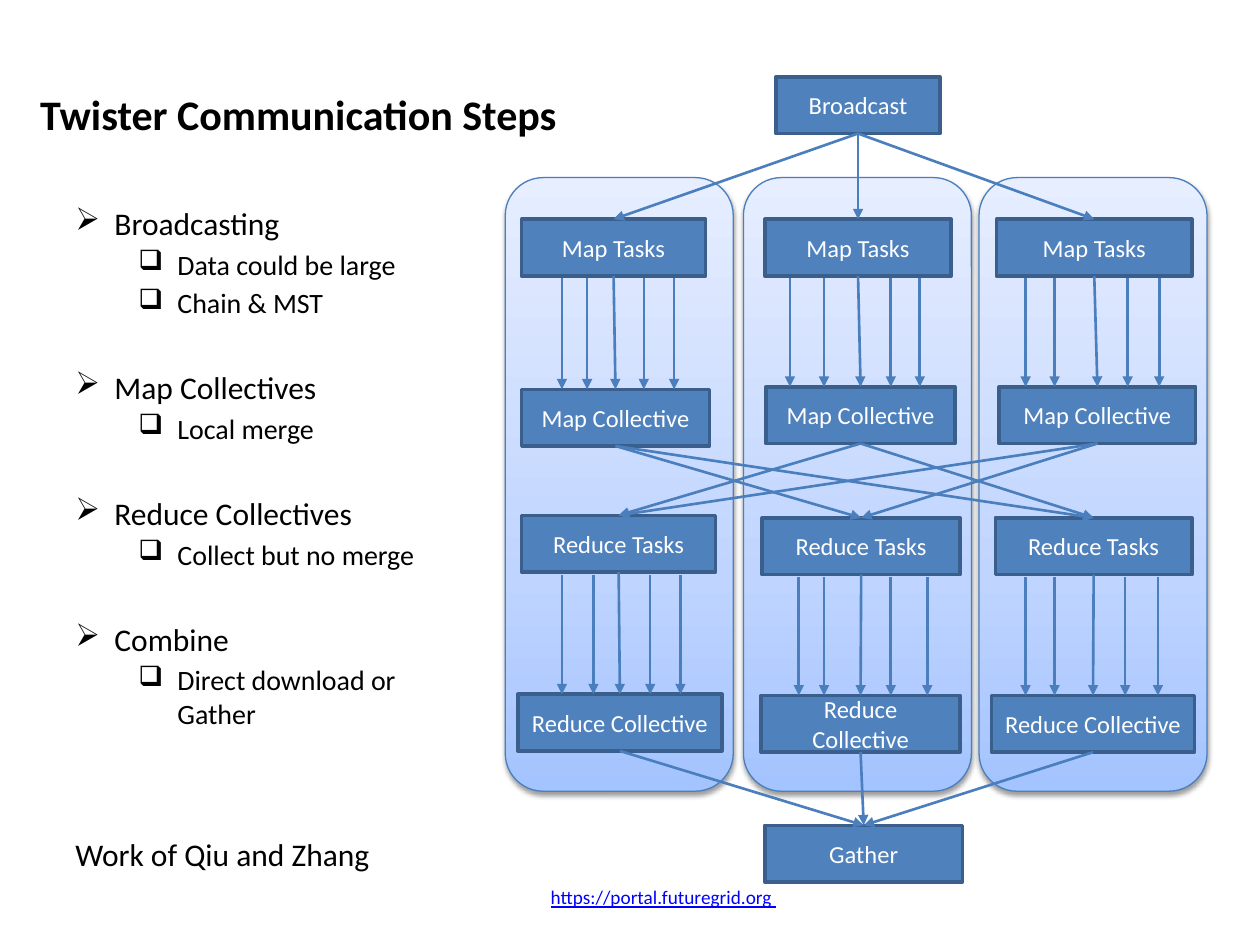
"""Build the slide of Twister communication steps."""
from dataclasses import dataclass

from lxml.etree import SubElement
from pptx import Presentation
from pptx.dml.color import RGBColor
from pptx.enum.shapes import MSO_CONNECTOR, MSO_SHAPE
from pptx.enum.text import MSO_ANCHOR, PP_ALIGN
from pptx.oxml import parse_xml
from pptx.oxml.ns import nsdecls, qn
from pptx.util import Inches, Pt


@dataclass(frozen=True)
class Theme:
    font: str = "Calibri"
    ink: str = "000000"
    white: str = "FFFFFF"
    link: str = "0000FF"
    fill: str = "4F81BD"
    edge: str = "3A5F8C"
    line: str = "4B7EBC"
    fade: tuple = ((0, "A4C4FF"), (35, "BFD4FF"), (100, "E6EEFF"))
    title: int = 24
    head: int = 18
    item: int = 16
    node: int = 14
    foot: int = 11


@dataclass(frozen=True)
class Node:
    text: str
    left: float
    top: float
    width: float
    height: float = 0.45


@dataclass(frozen=True)
class Lane:
    left: float
    nodes: tuple
    maps: tuple
    folds: tuple


@dataclass(frozen=True)
class Topic:
    head: str
    items: tuple


THEME = Theme()
LANES = (
    Lane(4.01,
         (Node("Map Tasks", 4.14, 1.74, 1.46), Node("Map Collective", 4.14, 3.09, 1.49),
          Node("Reduce Tasks", 4.14, 4.09, 1.54), Node("Reduce Collective", 4.11, 5.51, 1.62)),
         (4.46, 4.66, 5.11, 5.35), (4.46, 4.71, 5.16, 5.4)),
    Lane(5.9,
         (Node("Map Tasks", 6.07, 1.74, 1.48), Node("Map Collective", 6.08, 3.07, 1.5),
          Node("Reduce Tasks", 6.05, 4.11, 1.57), Node("Reduce Collective", 6.04, 5.52, 1.58)),
         (6.27, 6.54, 7.07, 7.3), (6.34, 6.54, 7.07, 7.36)),
    Lane(7.77,
         (Node("Map Tasks", 7.91, 1.74, 1.55), Node("Map Collective", 7.93, 3.07, 1.56),
          Node("Reduce Tasks", 7.9, 4.11, 1.56), Node("Reduce Collective", 7.87, 5.52, 1.61)),
         (8.14, 8.37, 8.95, 9.2), (8.14, 8.37, 8.93, 9.19)),
)
TOPICS = (
    Topic("Broadcasting", ("Data could be large", "Chain & MST")),
    Topic("Map Collectives", ("Local merge",)),
    Topic("Reduce Collectives", ("Collect but no merge",)),
    Topic("Combine", ("Direct download or Gather",)),
)


def write(para, text: str, *, size: int, color: str = THEME.ink, bold: bool = False,
          under: bool = False, align=PP_ALIGN.LEFT) -> None:
    para.alignment = align
    run = para.add_run()
    run.text = text
    font = run.font
    font.name, font.size, font.bold, font.underline = THEME.font, Pt(size), bold, under
    font.color.rgb = RGBColor.from_string(color)


def label(slide, box: tuple, wrap: bool = False):
    frame = slide.shapes.add_textbox(*map(Inches, box)).text_frame
    frame.word_wrap = wrap
    return frame


def bullet(para, text: str, *, mark: str, size: int, level: int, before: int) -> None:
    para.level = level
    para.space_before = Pt(before)
    props = para._p.get_or_add_pPr()
    props.set("marL", str(Inches(0.31 + 0.5 * level)))
    props.set("indent", str(-Inches(0.31)))
    SubElement(props, qn("a:buChar")).set("char", mark)
    write(para, text, size=size)


def outline(slide, topics: tuple) -> None:
    frame = label(slide, (0.5, 1.57, 3.29, 5.13), wrap=True)
    for rank, topic in enumerate(topics):
        para = frame.add_paragraph() if rank else frame.paragraphs[0]
        bullet(para, topic.head, mark="➢", size=THEME.head, level=0, before=28 if rank else 0)
        for item in topic.items:
            bullet(frame.add_paragraph(), item, mark="❑", size=THEME.item, level=1, before=3)


def panel(slide, left: float) -> None:
    shape = slide.shapes.add_shape(MSO_SHAPE.ROUNDED_RECTANGLE, Inches(left), Inches(1.41),
                                   Inches(1.81), Inches(4.87))
    shape.fill.gradient()
    stops = "".join(f'<a:gs pos="{at * 1000}"><a:srgbClr val="{color}"/></a:gs>'
                    for at, color in THEME.fade)
    props = shape.element.spPr
    props.replace(props.find(qn("a:gradFill")), parse_xml(
        f'<a:gradFill {nsdecls("a")} rotWithShape="1"><a:gsLst>{stops}</a:gsLst>'
        '<a:lin ang="16200000" scaled="0"/></a:gradFill>'))
    shape.line.color.rgb = RGBColor.from_string(THEME.line)
    shape.line.width = Pt(0.75)
    shape.shadow.inherit = False
    props.find(qn("a:effectLst")).append(parse_xml(
        f'<a:outerShdw {nsdecls("a")} blurRad="{Pt(3.1)}" dist="{Pt(1.6)}" dir="5400000" '
        'rotWithShape="0"><a:srgbClr val="000000"><a:alpha val="38000"/></a:srgbClr>'
        '</a:outerShdw>'))


def block(slide, node: Node):
    shape = slide.shapes.add_shape(MSO_SHAPE.RECTANGLE, Inches(node.left), Inches(node.top),
                                   Inches(node.width), Inches(node.height))
    shape.shadow.inherit = False
    shape.fill.solid()
    shape.fill.fore_color.rgb = RGBColor.from_string(THEME.fill)
    shape.line.color.rgb = RGBColor.from_string(THEME.edge)
    shape.line.width = Pt(2)
    frame = shape.text_frame
    frame.vertical_anchor = MSO_ANCHOR.MIDDLE
    write(frame.paragraphs[0], node.text, size=THEME.node, color=THEME.white,
          align=PP_ALIGN.CENTER)
    return shape


def arrow(slide, start: tuple, end: tuple):
    link = slide.shapes.add_connector(MSO_CONNECTOR.STRAIGHT, *start, *end)
    link.line.color.rgb = RGBColor.from_string(THEME.line)
    link.line.width = Pt(1.5)
    SubElement(link.line._get_or_add_ln(), qn("a:tailEnd")).set("type", "triangle")
    SubElement(link.element.spPr, qn("a:effectLst"))
    return link


def join(slide, upper, lower) -> None:
    link = arrow(slide, (0, 0), (0, 0))
    link.begin_connect(upper, 2)
    link.end_connect(lower, 0)


def fan(slide, upper, lower, spots: tuple) -> None:
    join(slide, upper, lower)
    start = upper.top + upper.height + Inches(0.02)
    for spot in spots:
        arrow(slide, (Inches(spot), start), (Inches(spot), lower.top))


def main() -> None:
    deck = Presentation()
    deck.slide_width, deck.slide_height = Inches(10), Inches(7.5)
    slide = deck.slides.add_slide(deck.slide_layouts[6])

    foot = label(slide, (3.44, 6.92, 3.65, 0.4), wrap=True)
    foot.vertical_anchor = MSO_ANCHOR.MIDDLE
    write(foot.paragraphs[0], "https://portal.futuregrid.org ", size=THEME.foot,
          color=THEME.link, under=True, align=PP_ALIGN.CENTER)
    outline(slide, TOPICS)

    for lane in LANES:
        panel(slide, lane.left)
    source = block(slide, Node("Broadcast", 6.16, 0.61, 1.3))
    sink = block(slide, Node("Gather", 6.07, 6.55, 1.57))
    grid = [[block(slide, node) for node in lane.nodes] for lane in LANES]

    for lane, (task, merge, fold, last) in zip(LANES, grid):
        join(slide, source, task)
        fan(slide, task, merge, lane.maps)
        fan(slide, fold, last, lane.folds)
        join(slide, last, sink)
        for other in grid:
            if other[2] is not fold:
                join(slide, merge, other[2])

    title = label(slide, (0.22, 0.65, 4.35, 0.5))
    write(title.paragraphs[0], "Twister Communication Steps", size=THEME.title, bold=True)
    credit = label(slide, (0.5, 6.58, 2.57, 0.4))
    write(credit.paragraphs[0], "Work of Qiu and Zhang", size=THEME.head)
    deck.save("out.pptx")


if __name__ == "__main__":
    main()
